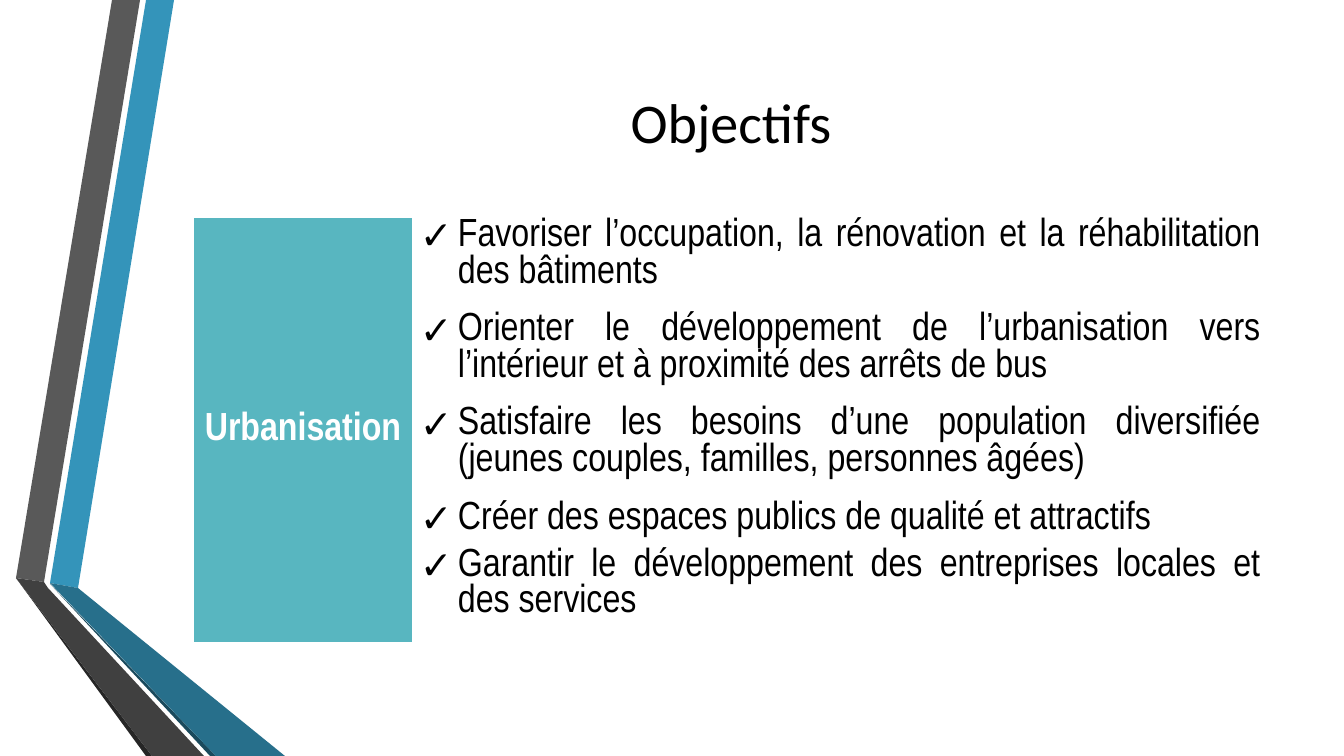
from lxml import etree
from pptx import Presentation, util as u
from pptx.dml.color import RGBColor
from pptx.enum import text
from pptx.oxml import ns

THEME = {
    "title_font": "Calibri", "title_size": 40,
    "body_font": "Arial Narrow", "body_size": 28,
    "ink": "000000", "light": "FFFFFF", "heading": "58B6C0",
    "blue": "3494BA", "blue_dark": "276F8B", "blue_edge": "1A4A5D",
    "grey": "595959", "grey_dark": "404040", "grey_edge": "262626",
}
SCALE = 12192000 / 1344  # EMU per px
NO_STYLE = "{2D5ABB26-0587-4C30-8999-92F81FD0307C}"


def px(length):
    return u.Emu(round(length * SCALE))


def add_run(paragraph, words, kind, color, bold=False):
    run = paragraph.add_run()
    run.text = words
    run.font.name = THEME[kind + "_font"]
    run.font.size = u.Pt(THEME[kind + "_size"])
    run.font.bold = bold
    run.font.color.rgb = RGBColor.from_string(THEME[color])


prs = Presentation()
prs.slide_width, prs.slide_height = px(1344), px(756)
slide = prs.slides.add_slide(prs.slide_layouts[6])

# Folded ribbons on the left
ribbons = [
    ("blue", [(50, 583), (78, 588), (174, 0), (146, 0)]),
    ("grey", [(140, 0), (112, 0), (16, 578), (44, 582)]),
    ("grey_edge", [(16, 578), (146, 756), (152, 756)]),
    ("blue_edge", [(50, 584), (210, 756), (216, 756)]),
    ("blue_dark", [(50, 583), (216, 756), (285, 756), (78, 588)]),
    ("grey_dark", [(204, 756), (48, 588), (44, 582), (16, 578), (152, 756)]),
]
for color, points in ribbons:
    outline = slide.shapes.build_freeform(*points[0], scale=SCALE)
    outline.add_line_segments(points[1:], close=True)
    ribbon = outline.convert_to_shape()
    ribbon.shadow.inherit = False
    ribbon.fill.solid()
    ribbon.fill.fore_color.rgb = RGBColor.from_string(THEME[color])
    ribbon.line.fill.background()

# Title
title = slide.shapes.add_textbox(px(194), px(25), px(1074), px(193)).text_frame
title.word_wrap = True
title.vertical_anchor = text.MSO_ANCHOR.MIDDLE
title.paragraphs[0].alignment = text.PP_ALIGN.CENTER
add_run(title.paragraphs[0], "Objectifs", "title", "ink")

# Table of goals, one row each
goals = [
    (2, "Favoriser l’occupation, la rénovation et la réhabilitation des bâtiments"),
    (2, "Orienter le développement de l’urbanisation vers l’intérieur et à proximité des arrêts de bus"),
    (2, "Satisfaire les besoins d’une population diversifiée (jeunes couples, familles, personnes âgées)"),
    (1, "Créer des espaces publics de qualité et attractifs"),
    (2, "Garantir le développement des entreprises locales et des services"),
]
LINE = 42
frame = slide.shapes.add_table(len(goals), 2, px(194), px(218), px(1074),
                               px(LINE * sum(lines for lines, _ in goals)))
table = frame.table
table.first_row = table.horz_banding = False
table._tbl.tblPr.find(ns.qn("a:tableStyleId")).text = NO_STYLE
table.columns[0].width, table.columns[1].width = px(218), px(856)
for cell in table.iter_cells():
    cell.margin_left = cell.margin_right = px(8)
    cell.margin_top = cell.margin_bottom = 0
    cell.fill.background()

# Heading cell spanning all rows
heading = table.cell(0, 0)
heading.merge(table.cell(len(goals) - 1, 0))
heading.fill.solid()
heading.fill.fore_color.rgb = RGBColor.from_string(THEME["heading"])
heading.vertical_anchor = text.MSO_ANCHOR.MIDDLE
theme_name = heading.text_frame.paragraphs[0]
theme_name.alignment = text.PP_ALIGN.CENTER
add_run(theme_name, "Urbanisation", "body", "light", bold=True)

# Check-marked goals
for row, (lines, goal) in enumerate(goals):
    table.rows[row].height = px(LINE * lines)
    item = table.cell(row, 1).text_frame.paragraphs[0]
    item.alignment = text.PP_ALIGN.JUSTIFY
    props = item._p.get_or_add_pPr()
    props.set("marL", str(px(38)))
    props.set("indent", str(-px(38)))
    etree.SubElement(props, ns.qn("a:buFont"), typeface="Arial")
    etree.SubElement(props, ns.qn("a:buChar"), char="✓")
    add_run(item, goal, "body", "ink")

prs.save("out.pptx")
